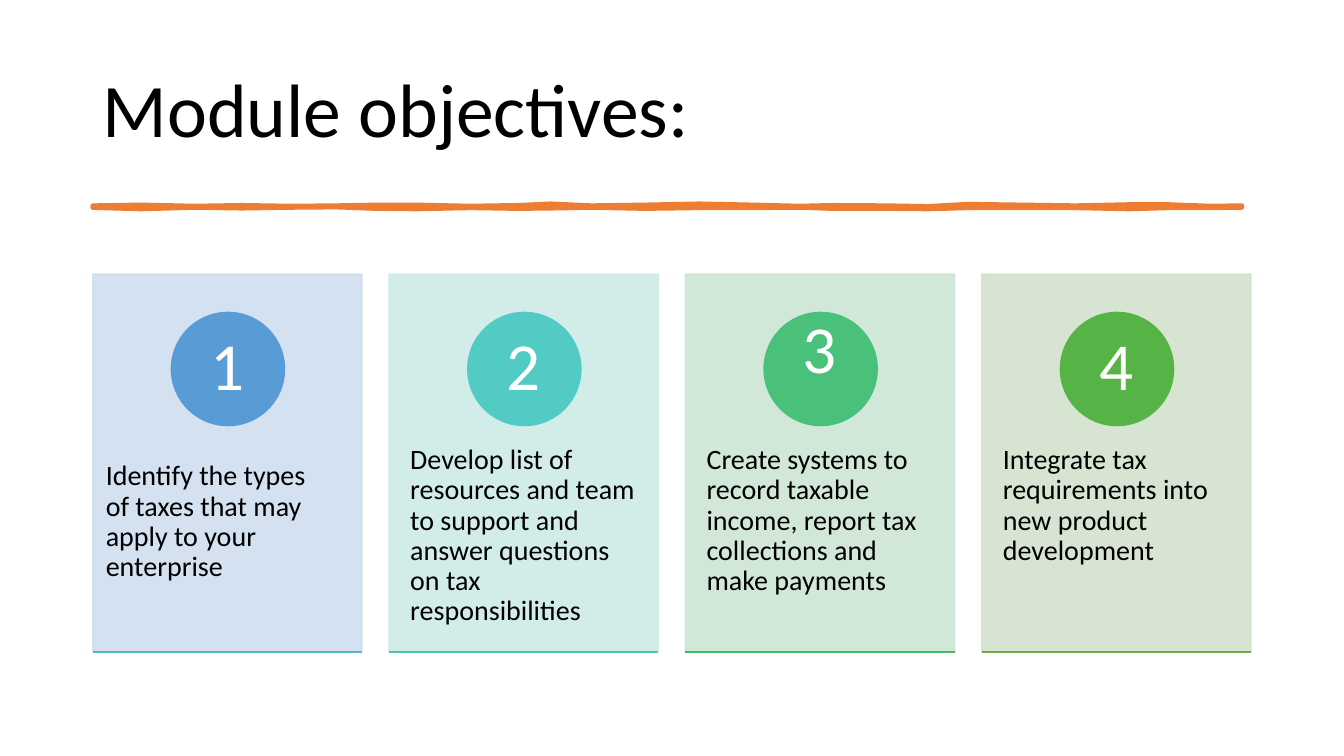
from lxml import etree
from pptx import Presentation
from pptx.dml.color import RGBColor
from pptx.enum.shapes import MSO_CONNECTOR, MSO_SHAPE
from pptx.enum.text import MSO_ANCHOR, PP_ALIGN
from pptx.oxml.ns import qn
from pptx.util import Inches, Pt

LEFT, PITCH, CARD_W = 6.9, 22.05, 20.03
CARD_TOP, CARD_H = 36.27, 49.9
TITLE = dict(size=Pt(54))
BODY = dict(size=Pt(20))
NUMBER = dict(size=Pt(48), color="FFFFFF", align=PP_ALIGN.CENTER)

# card tint, circle, base line, text, text shift (x, y), number shift y
CARDS = [
    ("CFDEEF", "599BD5", "55B6D0",
     "Identify the types of taxes that may apply to your enterprise", (-0.6, 2.14), 0),
    ("CDEAE8", "51CBC3", "4DC69E",
     "Develop list of resources and team to support and answer questions on tax responsibilities",
     (0, 0), 0),
    ("CCE6D4", "4AC17A", "46BC57",
     "Create systems to record taxable income, report tax collections and make payments",
     (0, 0), -2.14),
    ("D3E1CC", "55B445", "6FAB46",
     "Integrate tax requirements into new product development", (0, 0), 0),
]

# x, top and bottom of the brush stroke
STROKE = [
    (6.9, 27.2, 27.47), (10.5, 27.1, 27.65), (14.5, 27.25, 27.45),
    (18, 27.15, 27.55), (21.5, 27.25, 27.45), (25, 27.2, 27.4),
    (28, 27.1, 27.6), (31, 27.1, 27.65), (35, 27.25, 27.5),
    (38.5, 27.15, 27.6), (41, 26.95, 27.55), (44, 27.2, 27.45),
    (48, 27.1, 27.6), (52, 26.95, 27.5), (56, 27.1, 27.5),
    (59.5, 27.25, 27.45), (62, 27.15, 27.6), (66, 27.2, 27.6),
    (69, 27.3, 27.65), (72, 27, 27.5), (76, 27.1, 27.5),
    (80, 27.2, 27.5), (84, 27.05, 27.65), (87, 27.05, 27.5),
    (90, 27.25, 27.5), (92.4, 27.2, 27.45),
]


def rgb(value):
    """Turn a hex string into a colour."""
    return RGBColor.from_string(value)


class Deck:
    """Hold the style and the current slide; lengths are percent of the slide."""

    def __init__(self, font="Calibri", ink="000000"):
        """Start a wide presentation with one titled slide."""
        self.prs = Presentation()
        self.prs.slide_width, self.prs.slide_height = Inches(13.33), Inches(7.5)
        self.s = self.prs.slides.add_slide(self.prs.slide_layouts[5])
        self.font, self.ink = font, ink

    def x(self, share):
        """Give a share of the slide width."""
        return round(self.prs.slide_width * share / 100)

    def y(self, share):
        """Give a share of the slide height."""
        return round(self.prs.slide_height * share / 100)

    def box(self, left, top, width, height):
        """Give a box as four lengths."""
        return self.x(left), self.y(top), self.x(width), self.y(height)

    def fill_text(self, tf, text, size, color=None, align=PP_ALIGN.LEFT,
                  anchor=MSO_ANCHOR.TOP, ins=(0.1, 0.05)):
        """Put one formatted paragraph in a text frame."""
        frame = dict(word_wrap=True, vertical_anchor=anchor,
                     margin_left=Inches(ins[0]), margin_right=Inches(ins[0]),
                     margin_top=Inches(ins[1]), margin_bottom=Inches(ins[1]))
        p = tf.paragraphs[0]
        r = p.add_run()
        r.text = text
        r.font.color.rgb = rgb(color or self.ink)
        for target, values in ((tf, frame), (p, dict(alignment=align, line_spacing=0.9)),
                               (r.font, dict(name=self.font, size=size))):
            for key, value in values.items():
                setattr(target, key, value)

    def title(self, text, *box):
        """Fill and place the title placeholder."""
        sp = self.s.shapes.title
        for key, value in zip(("left", "top", "width", "height"), self.box(*box)):
            setattr(sp, key, value)
        self.fill_text(sp.text_frame, text, anchor=MSO_ANCHOR.MIDDLE, **TITLE)

    def text(self, text, *box, **style):
        """Add a text box."""
        sp = self.s.shapes.add_textbox(*self.box(*box))
        self.fill_text(sp.text_frame, text, **style)

    def paint(self, sp, color, width=1, alpha=None):
        """Give a shape one colour for fill and line."""
        sp.shadow.inherit = False
        sp.fill.solid()
        sp.fill.fore_color.rgb = sp.line.color.rgb = rgb(color)
        sp.line.width = Pt(width)
        if alpha:
            for clr in sp.element.spPr.iter(qn("a:srgbClr")):
                etree.SubElement(clr, qn("a:alpha")).set("val", str(alpha * 1000))

    def shape(self, kind, color, *box, alpha=None):
        """Add a preset shape."""
        self.paint(self.s.shapes.add_shape(kind, *self.box(*box)), color, alpha=alpha)

    def line(self, color, left, top, width):
        """Add a level line."""
        c = self.s.shapes.add_connector(MSO_CONNECTOR.STRAIGHT, self.x(left), self.y(top),
                                        self.x(left + width), self.y(top))
        c.line.color.rgb = rgb(color)
        c.line.width = Pt(1)
        etree.SubElement(c.element.spPr, qn("a:effectLst"))

    def stroke(self, color, knots):
        """Add an uneven brush stroke."""
        upper = [(self.x(x), self.y(top)) for x, top, _ in knots]
        lower = [(self.x(x), self.y(bottom)) for x, _, bottom in reversed(knots)]
        fb = self.s.shapes.build_freeform(*upper[0])
        fb.add_line_segments(upper[1:] + lower, close=True)
        sp = fb.convert_to_shape()
        self.paint(sp, color, 3.25)
        etree.SubElement(sp.element.spPr.find(qn("a:ln")), qn("a:round"))

    def card(self, col, tint, strong, base, text, shift, lift):
        """Add one numbered card in a grid column."""
        left = LEFT + col * PITCH
        self.shape(MSO_SHAPE.RECTANGLE, tint, left, CARD_TOP, CARD_W, CARD_H, alpha=89)
        self.text(text, left + shift[0], 54.13 + shift[1], CARD_W, 30,
                  ins=(0.21, 0.36), **BODY)
        self.shape(MSO_SHAPE.OVAL, strong, left + 5.85, 41.33, 8.42, 14.97)
        self.text(str(col + 1), left + 7.05, 43.47 + lift, 5.93, 10.53,
                  anchor=MSO_ANCHOR.MIDDLE, ins=(0.09, 0.01), **NUMBER)
        self.line(base, left, 86.27, CARD_W)


def main():
    """Build and save the slide."""
    deck = Deck()
    deck.title("Module objectives:", LEFT, 5.33, 86.25, 19.33)
    deck.stroke("ED7D31", STROKE)
    for col, card in enumerate(CARDS):
        deck.card(col, *card)
    deck.prs.save("out.pptx")


if __name__ == "__main__":
    main()
